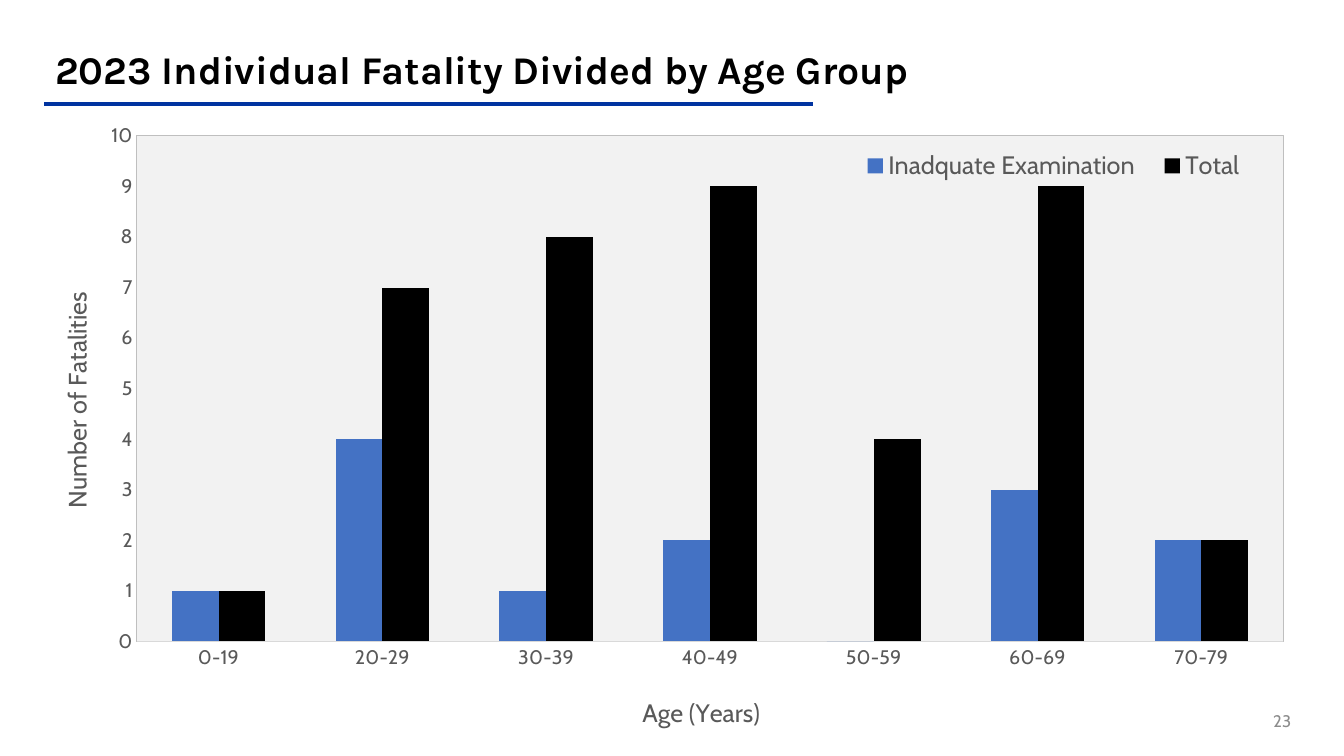
import pptx
import pptx.chart.data
import pptx.dml.color
import pptx.enum.chart
import pptx.enum.shapes
import pptx.enum.text
import pptx.oxml
import pptx.oxml.ns
import pptx.util

Cm = pptx.util.Cm
Pt = pptx.util.Pt
hue = pptx.dml.color.RGBColor.from_string
enum = pptx.enum


def write(frame, text, size, color="595959", face="Cabin", bold=False, align=None, space=None):
    para = frame.paragraphs[0]
    para.alignment = align
    para.line_spacing = space
    run = para.add_run()
    run.text = text
    run.font.size = Pt(size)
    run.font.name = face
    run.font.bold = bold
    run.font.color.rgb = hue(color)


deck = pptx.Presentation()
deck.slide_width = Cm(33.87)
deck.slide_height = Cm(19.05)
slide = deck.slides.add_slide(deck.slide_layouts[5])

rule = slide.shapes.add_connector(
    enum.shapes.MSO_CONNECTOR.STRAIGHT, Cm(1.12), Cm(2.62), Cm(20.5), Cm(2.62))
rule.line.color.rgb = hue("0033A0")
rule.line.width = Pt(3)
rule.element.spPr.append(pptx.oxml.parse_xml(
    f"<a:effectLst {pptx.oxml.ns.nsdecls('a')}/>"))

title = slide.shapes.title
title.left, title.top, title.width, title.height = Cm(1.14), Cm(1.02), Cm(31.57), Cm(1.6)
title.text_frame.vertical_anchor = enum.text.MSO_ANCHOR.MIDDLE
title.text_frame.auto_size = enum.text.MSO_AUTO_SIZE.NONE
write(title.text_frame, "2023 Individual Fatality Divided by Age Group", 28,
      color="000000", face="Karla", bold=True, align=enum.text.PP_ALIGN.LEFT, space=0.9)

data = pptx.chart.data.CategoryChartData()
data.categories = ["0-19", "20-29", "30-39", "40-49", "50-59", "60-69", "70-79"]
data.add_series("Inadquate Examination", [1, 4, 1, 2, 0, 3, 2])
data.add_series("Total", [1, 7, 8, 9, 4, 9, 2])
chart = slide.shapes.add_chart(
    enum.chart.XL_CHART_TYPE.COLUMN_CLUSTERED,
    Cm(1.07), Cm(2.92), Cm(31.65), Cm(15.75), data).chart
chart.has_title = False
chart.font.name = "Cabin"
chart.font.size = Pt(10)
chart.font.color.rgb = hue("000000")

plot = chart.plots[0]
plot.gap_width = 150
plot.overlap = 0
plot.vary_by_categories = False
for bar, color in zip(plot.series, ["4472C4", "000000"]):
    bar.format.fill.solid()
    bar.format.fill.fore_color.rgb = hue(color)

ages, count = chart.category_axis, chart.value_axis
for axis, name in [(ages, "Age (Years)"), (count, "Number of Fatalities")]:
    axis.has_major_gridlines = False
    axis.major_tick_mark = enum.chart.XL_TICK_MARK.NONE
    axis.minor_tick_mark = enum.chart.XL_TICK_MARK.NONE
    font = axis.tick_labels.font
    font.size = Pt(14)
    font.name = "Cabin"
    font.color.rgb = hue("595959")
    write(axis.axis_title.text_frame, name, 18)
ages.format.line.color.rgb = hue("D9D9D9")
ages.format.line.width = Pt(0.75)
count.format.line.fill.background()
count.minimum_scale = 0
count.maximum_scale = 10
count.major_unit = 1

chart.has_legend = True
legend = chart.legend
legend.position = enum.chart.XL_LEGEND_POSITION.BOTTOM
legend.include_in_layout = False
legend.font.size = Pt(18)
legend.font.name = "Cabin"
legend.font.color.rgb = hue("595959")

names = pptx.oxml.ns.nsdecls("c", "a")
root = chart.element
area = root.xpath(".//c:plotArea")[0]
area.append(pptx.oxml.parse_xml(
    f'<c:spPr {names}><a:solidFill><a:srgbClr val="F2F2F2"/></a:solidFill>'
    '<a:ln w="9525"><a:solidFill><a:srgbClr val="BFBFBF"/></a:solidFill></a:ln></c:spPr>'))

base, side = root.xpath(".//c:title")
key = root.xpath(".//c:legend")[0]
spots = [
    (area, 0, {"x": 0.075, "y": 0.032, "w": 0.913, "h": 0.809}),
    (base, 1, {"x": 0.474, "y": 0.92}),
    (side, 1, {"x": 0.01, "y": 0.275}),
    (key, 1, {"x": 0.64, "y": 0.05, "w": 0.33, "h": 0.06}),
]
for node, index, box in spots:
    for old in node.xpath("./c:layout"):
        node.remove(old)
    inner = '<c:layoutTarget val="inner"/>' if node is area else ""
    modes = "".join(f'<c:{k}Mode val="edge"/>' for k in "xy")
    sizes = "".join(f'<c:{k} val="{v}"/>' for k, v in box.items())
    node.insert(index, pptx.oxml.parse_xml(
        f"<c:layout {names}><c:manualLayout>{inner}{modes}{sizes}</c:manualLayout></c:layout>"))

page = slide.shapes.add_textbox(Cm(31.27), Cm(17.65), Cm(1.52), Cm(1.02)).text_frame
page.word_wrap = True
page.vertical_anchor = enum.text.MSO_ANCHOR.MIDDLE
write(page, "23", 12, color="8C8C8C", align=enum.text.PP_ALIGN.RIGHT)

deck.save("out.pptx")
